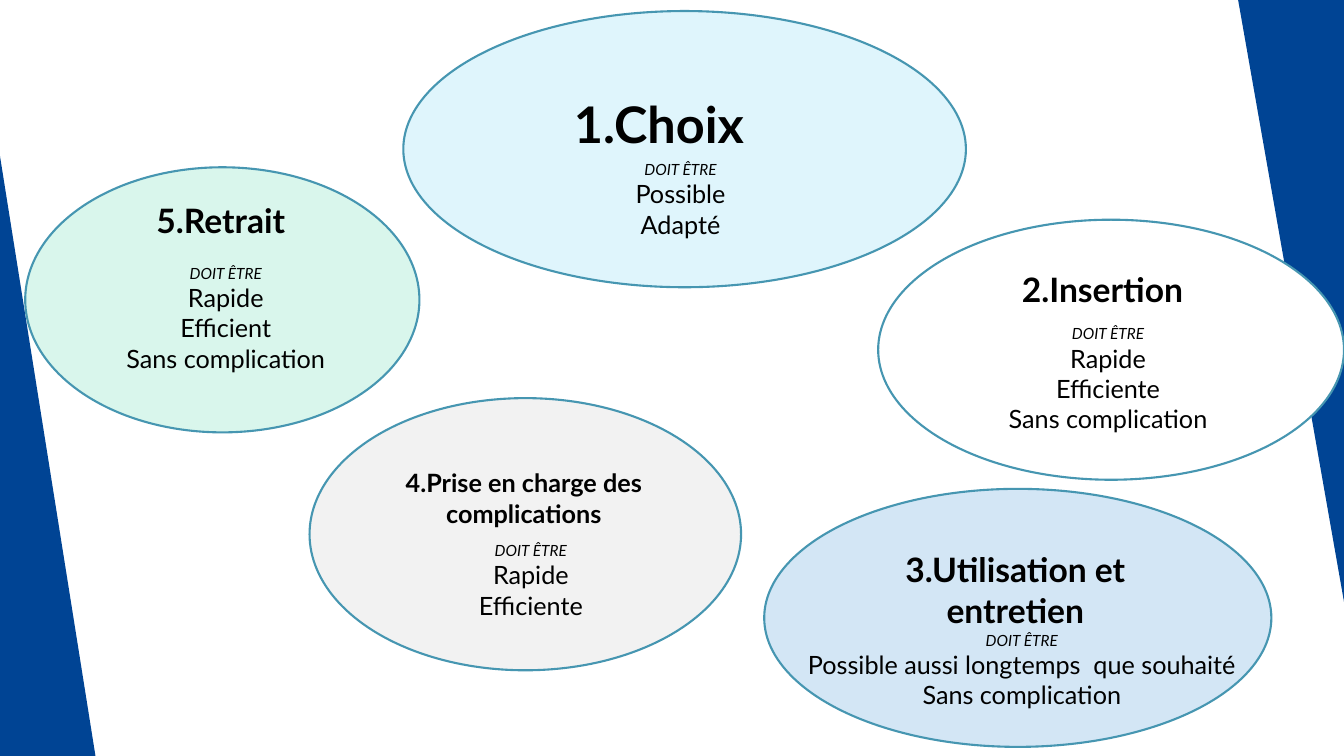
from pptx import Presentation
from pptx import util as u
from pptx.dml.color import RGBColor
from pptx.enum import shapes, text

COLORS = {
    "band": "004494",
    "edge": "4696B1",
    "ink": "000000",
    "sky": "DFF5FC",
    "mint": "D9F6EC",
    "white": "FFFFFF",
    "blue": "D3E6F5",
    "gray": "F2F2F2",
}

deck = Presentation()
deck.slide_width = u.Inches(13.33)
deck.slide_height = u.Inches(7.5)
slide = deck.slides.add_slide(deck.slide_layouts[6])


def draw(kind, box, fill):
    shape = slide.shapes.add_shape(kind, *map(u.Inches, box))
    shape.shadow.inherit = False
    shape.fill.solid()
    shape.fill.fore_color.rgb = RGBColor.from_string(COLORS[fill])
    shape.line.fill.background()
    return shape


def write(lines, box, size=18, bold=False, lead=None):
    frame = slide.shapes.add_textbox(*map(u.Inches, box)).text_frame
    frame.word_wrap = True
    frame.auto_size = text.MSO_AUTO_SIZE.SHAPE_TO_FIT_TEXT
    rows = [(line, size, False) for line in lines]
    if lead:
        rows.insert(0, (lead, 11, True))
    for i, (line, points, slant) in enumerate(rows):
        para = frame.paragraphs[0] if i == 0 else frame.add_paragraph()
        para.alignment = text.PP_ALIGN.CENTER
        run = para.add_run()
        run.text = line
        run.font.name = "Lato"
        run.font.size = u.Pt(points)
        run.font.bold = bold
        run.font.italic = slant
        run.font.color.rgb = RGBColor.from_string(COLORS["ink"])


for box, turn in [((0, 1.55, 0.95, 5.97), 0), ((12.28, 0, 1.05, 5.97), 180)]:
    band = draw(shapes.MSO_SHAPE.RIGHT_TRIANGLE, box, "band")
    band.rotation = turn

steps = [
    ("sky", (4, 0.11, 5.58, 2.74),
     ["1.Choix"], 36, (5.36, 0.87, 2.35, 0.71),
     ["Possible", "Adapté"], (5.55, 1.54, 2.4, 0.89)),
    ("mint", (0.25, 1.66, 3.91, 2.63),
     ["5.Retrait"], 24, (1.14, 1.93, 2.1, 0.5),
     ["Rapide", "Efficient", "Sans complication"], (0.86, 2.57, 2.76, 1.19)),
    ("white", (8.71, 2.18, 4.62, 2.58),
     ["2.Insertion"], 24, (9.66, 2.62, 2.55, 0.5),
     ["Rapide", "Efficiente", "Sans complication"], (9.58, 3.17, 2.82, 1.19)),
    ("blue", (7.58, 4.85, 5.03, 2.56),
     ["3.Utilisation et entretien"], 24, (8.22, 5.4, 3.7, 0.5),
     ["Possible aussi longtemps  que souhaité", "Sans complication"],
     (7.88, 6.21, 4.51, 0.89)),
    ("gray", (3.07, 3.95, 4.28, 2.7),
     ["4.Prise en charge des", "complications"], 18, (3.05, 4.59, 4.29, 0.71),
     ["Rapide", "Efficiente"], (4.44, 5.32, 1.65, 0.89)),
]

for fill, oval, title, size, head, goals, body in steps:
    shape = draw(shapes.MSO_SHAPE.OVAL, oval, fill)
    shape.line.color.rgb = RGBColor.from_string(COLORS["edge"])
    shape.line.width = u.Pt(1.5)

for fill, oval, title, size, head, goals, body in steps:
    write(title, head, size=size, bold=True)
    write(goals, body, lead="DOIT ÊTRE")

deck.save("out.pptx")
